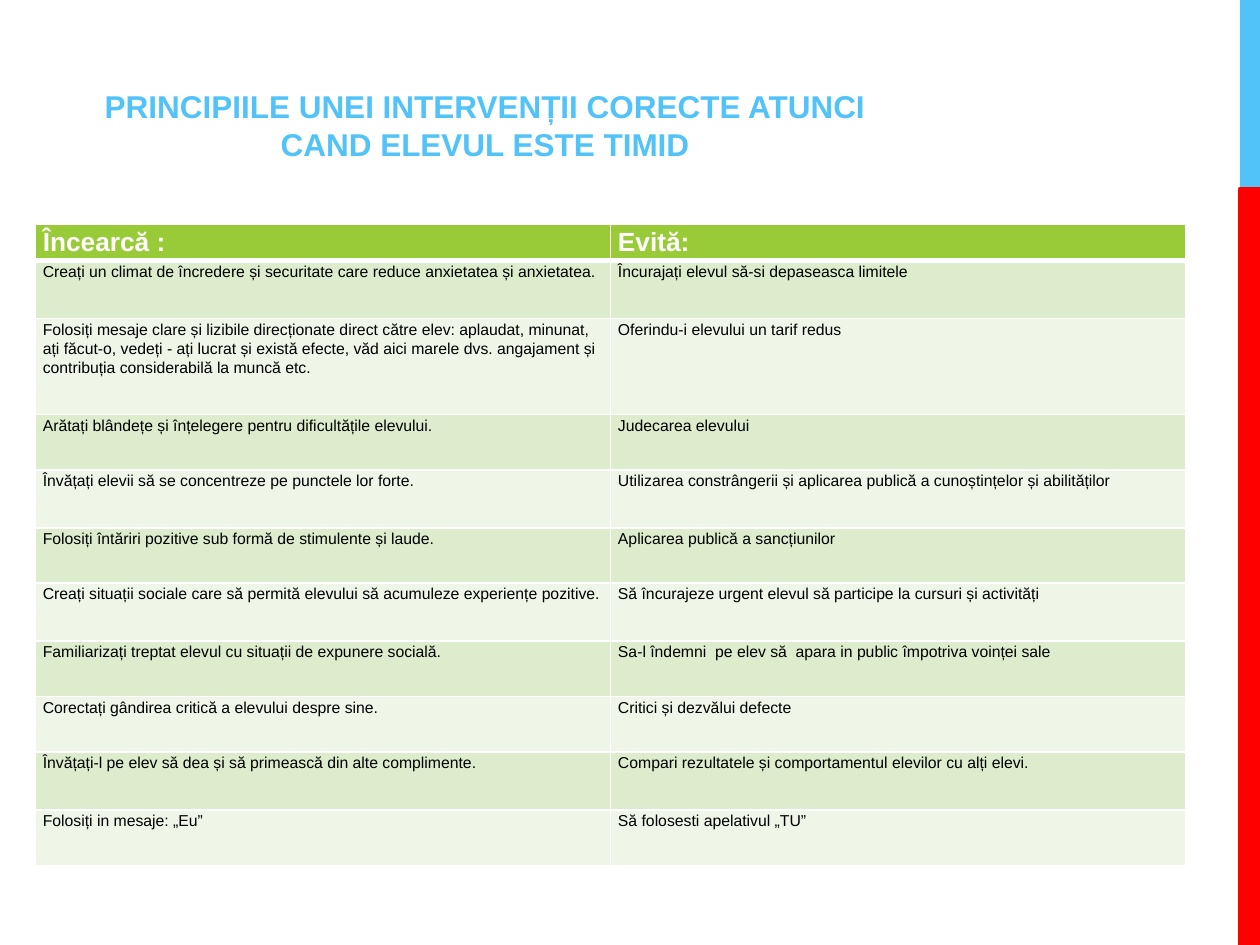
from lxml import etree
from pptx import Presentation
from pptx.dml.color import RGBColor
from pptx.enum.shapes import MSO_SHAPE
from pptx.enum.text import MSO_ANCHOR, MSO_AUTO_SIZE, PP_ALIGN
from pptx.oxml.ns import qn
from pptx.util import Inches, Pt

RECT = MSO_SHAPE.RECTANGLE
CENTER = PP_ALIGN.CENTER
BOTTOM, TOP = MSO_ANCHOR.BOTTOM, MSO_ANCHOR.TOP
NO_AUTOFIT = MSO_AUTO_SIZE.NONE

FONT = "Arial"
BLUE = RGBColor(0x51, 0xC3, 0xF9)
RED = RGBColor(0xFF, 0x00, 0x00)
GREEN = RGBColor(0x99, 0xCB, 0x38)
BAND_DARK = RGBColor(0xDE, 0xEC, 0xCE)
BAND_LIGHT = RGBColor(0xEF, 0xF6, 0xE8)
WHITE = RGBColor(0xFF, 0xFF, 0xFF)
BLACK = RGBColor(0x00, 0x00, 0x00)

TITLE = "PRINCIPIILE UNEI INTERVENȚII CORECTE ATUNCI CAND ELEVUL ESTE TIMID"

# Row height in inches, what to try, what to avoid
ROWS = [
    (0.29, "Încearcă :", "Evită:"),
    (0.46, "Creați un climat de încredere și securitate care reduce anxietatea și anxietatea.",
     "Încurajați elevul să-si depaseasca limitele"),
    (0.76, "Folosiți mesaje clare și lizibile direcționate direct către elev: aplaudat, minunat, "
     "ați făcut-o, vedeți - ați lucrat și există efecte, văd aici marele dvs. angajament și "
     "contribuția considerabilă la muncă etc.",
     "Oferindu-i elevului un tarif redus"),
    (0.44, "Arătați blândețe și înțelegere pentru dificultățile elevului.",
     "Judecarea elevului"),
    (0.46, "Învățați elevii să se concentreze pe punctele lor forte.",
     "Utilizarea constrângerii și aplicarea publică a cunoștințelor și abilităților"),
    (0.44, "Folosiți întăriri pozitive sub formă de stimulente și laude.",
     "Aplicarea publică a sancțiunilor"),
    (0.46, "Creați situații sociale care să permită elevului să acumuleze experiențe pozitive.",
     "Să încurajeze urgent elevul să participe la cursuri și activități"),
    (0.44, "Familiarizați treptat elevul cu situații de expunere socială.",
     "Sa-l îndemni  pe elev să  apara in public împotriva voinței sale"),
    (0.44, "Corectați gândirea critică a elevului despre sine.",
     "Critici și dezvălui defecte"),
    (0.46, "Învățați-l pe elev să dea și să primească din alte complimente.",
     "Compari rezultatele și comportamentul elevilor cu alți elevi."),
    (0.44, "Folosiți in mesaje: „Eu”", "Să folosesti apelativul „TU”"),
]


def format_font(font, size, color, bold):
    font.name = FONT
    font.size = Pt(size)
    font.bold = bold
    font.color.rgb = color


def add_bar(s, top, height, color, line_width=None):
    bar = s.shapes.add_shape(RECT, Inches(9.84), Inches(top), Inches(0.16), Inches(height))
    bar.shadow.inherit = False
    bar.fill.solid()
    bar.fill.fore_color.rgb = color
    if line_width:
        bar.line.color.rgb = color
        bar.line.width = Pt(line_width)
    else:
        bar.line.fill.background()


def set_title(s):
    sp = s.shapes.title
    sp.left, sp.top = Inches(0.5), Inches(0.17)
    sp.width, sp.height = Inches(6.7), Inches(1.46)
    tf = sp.text_frame
    tf.text = TITLE
    tf.word_wrap = True
    tf.auto_size = NO_AUTOFIT
    tf.vertical_anchor = BOTTOM
    tf.margin_left = tf.margin_right = Inches(0.1)
    tf.margin_top, tf.margin_bottom = Inches(0.05), Inches(0.34)
    p = tf.paragraphs[0]
    p.alignment = CENTER
    format_font(p.runs[0].font, 18, BLUE, True)


def set_borders(cell, bottom_width):
    tc_pr = cell._tc.get_or_add_tcPr()
    for side, width in (("L", 1), ("R", 1), ("T", 1), ("B", bottom_width)):
        ln = etree.SubElement(tc_pr, qn("a:ln" + side), w=str(Pt(width)))
        fill = etree.SubElement(ln, qn("a:solidFill"))
        etree.SubElement(fill, qn("a:srgbClr"), val=str(WHITE))


def fill_cell(cell, text, is_header, color):
    set_borders(cell, 3 if is_header else 1)
    cell.fill.solid()
    cell.fill.fore_color.rgb = color
    cell.margin_left = cell.margin_right = Inches(0.06)
    cell.margin_top, cell.margin_bottom = Inches(0.01), 0
    cell.vertical_anchor = TOP
    cell.text_frame.text = text
    p = cell.text_frame.paragraphs[0]
    p.line_spacing = 1.07
    p.space_after = Pt(8)
    if is_header:
        format_font(p.runs[0].font, 15, WHITE, True)
    else:
        format_font(p.runs[0].font, 9, BLACK, False)


def add_advice_table(s):
    height = sum(row[0] for row in ROWS)
    table = s.shapes.add_table(len(ROWS), 2, Inches(0.28), Inches(1.78),
                               Inches(9.13), Inches(height)).table
    for i, (row_height, *texts) in enumerate(ROWS):
        table.rows[i].height = Inches(row_height)
        color = GREEN if i == 0 else BAND_DARK if i % 2 else BAND_LIGHT
        for j, text in enumerate(texts):
            fill_cell(table.cell(i, j), text, i == 0, color)


def main():
    prs = Presentation()
    prs.slide_width, prs.slide_height = Inches(10), Inches(7.5)
    s = prs.slides.add_slide(prs.slide_layouts[5])
    # Side bars
    add_bar(s, 0, 1.5, BLUE)
    add_bar(s, 1.5, 6, RED, 2.25)
    # Content
    set_title(s)
    add_advice_table(s)
    prs.save("out.pptx")


if __name__ == "__main__":
    main()
